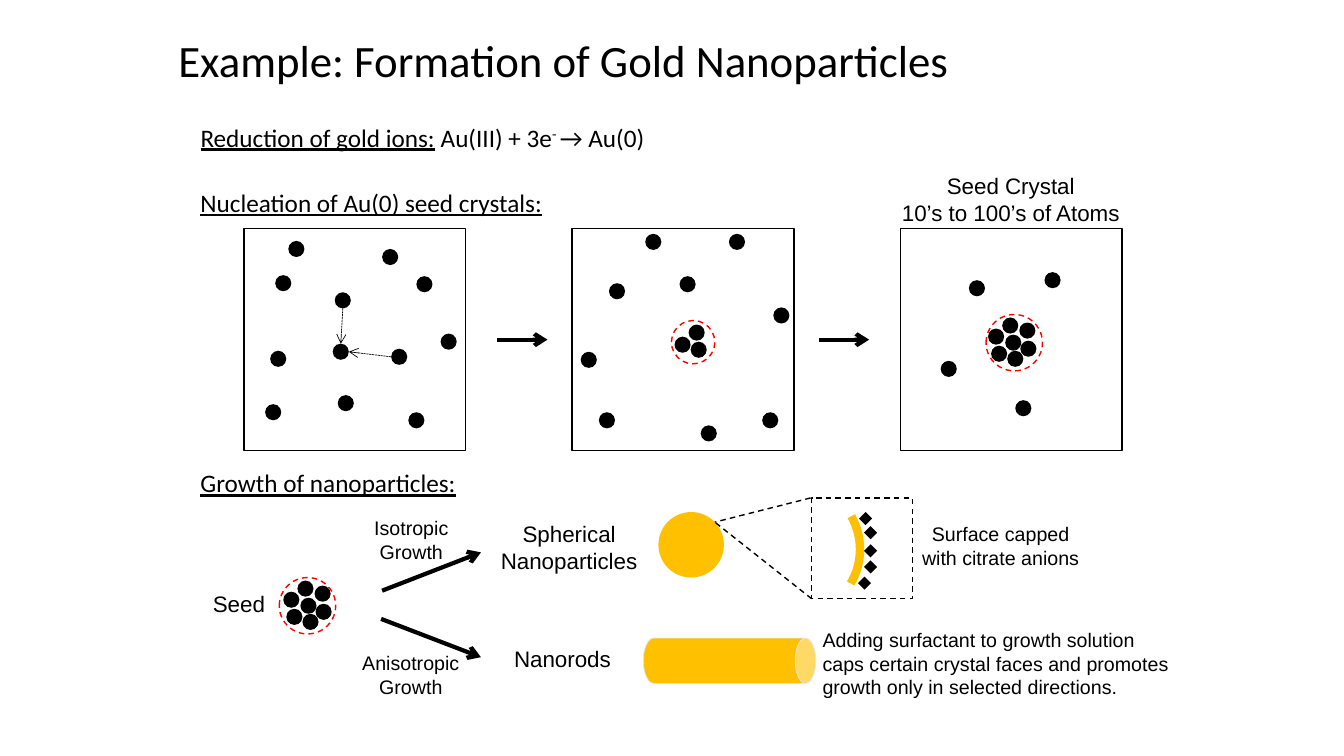
"""Build the slide on the formation of gold nanoparticles."""
from lxml.etree import SubElement
from pptx import Presentation
from pptx.dml.color import RGBColor
from pptx.enum.dml import MSO_LINE as DASH
from pptx.enum.shapes import MSO_CONNECTOR, MSO_SHAPE as SHAPE
from pptx.enum.text import MSO_ANCHOR, MSO_AUTO_SIZE, PP_ALIGN
from pptx.oxml.ns import qn
from pptx.util import Inches, Pt

COLORS = {"black": "000000", "red": "FF0000", "gold": "FFC000", "gray": "E7E6E6"}
ATOM = 0.16
LEFT, CENTER = PP_ALIGN.LEFT, PP_ALIGN.CENTER

prs = Presentation()
prs.slide_width, prs.slide_height = Inches(13.33), Inches(7.5)
slide = prs.slides.add_slide(prs.slide_layouts[6])


def draw(kind, x, y, w, h, fill=None, line=None, width=1, dash=None):
    shape = slide.shapes.add_shape(kind, Inches(x), Inches(y), Inches(w), Inches(h))
    shape.shadow.inherit = False
    if fill:
        shape.fill.solid()
        shape.fill.fore_color.rgb = RGBColor.from_string(COLORS[fill])
    else:
        shape.fill.background()
    if line:
        shape.line.color.rgb = RGBColor.from_string(COLORS[line])
        shape.line.width = Pt(width)
        shape.line.dash_style = dash
    else:
        shape.line.fill.background()
    return shape


def write(x, y, w, h, lines, size, font="Arial", align=LEFT):
    frame = slide.shapes.add_textbox(Inches(x), Inches(y), Inches(w), Inches(h)).text_frame
    frame.word_wrap = False
    frame.auto_size = MSO_AUTO_SIZE.SHAPE_TO_FIT_TEXT
    frame.text = "\n".join(lines)
    for paragraph in frame.paragraphs:
        paragraph.alignment = align
        paragraph.font.size = Pt(size)
        paragraph.font.name = font
        paragraph.font.color.rgb = RGBColor.from_string(COLORS["black"])
    return frame


title = write(1.67, 0, 9, 1.25, ["Example: Formation of Gold Nanoparticles"], 32, "Calibri")
title.word_wrap = True
title.auto_size = MSO_AUTO_SIZE.NONE
title.vertical_anchor = MSO_ANCHOR.MIDDLE
title.paragraphs[0].line_spacing = 0.9

headings = [
    (1.16, 4.69, "Reduction of gold ions:",
     [(" Au(III) + 3e", 0), ("- ", 30000), ("→ Au(0)", 0)]),
    (1.81, 3.63, "Nucleation of Au(0) seed crystals:", []),
    (4.59, 2.76, "Growth of nanoparticles:", []),
]
for y, w, heading, equation in headings:
    paragraph = write(1.89, y, w, 0.4, [heading], 18, "Calibri").paragraphs[0]
    paragraph.runs[0].font.underline = True
    for part, baseline in equation:
        run = paragraph.add_run()
        run.text = part
        if baseline:
            run.font._element.set("baseline", str(baseline))

free_atoms = [
    (2.86, 2.39), (4.13, 2.74), (3.32, 2.9), (3.88, 3.46), (3.35, 3.92), (2.68, 3.48),
    (3.3, 3.41), (2.73, 2.73), (3.79, 2.47), (4.37, 3.31), (2.63, 4.01), (4.05, 4.09),
    (6.4, 2.32), (6.74, 2.74), (6.83, 3.22), (6.85, 3.39), (6.95, 4.22), (5.76, 3.49),
    (6.69, 3.34), (6.04, 2.81), (7.23, 2.32), (7.67, 3.05), (5.94, 4.09), (7.56, 4.09),
    (9.61, 2.78), (10.07, 3.97), (10.36, 2.7), (9.33, 3.58),
]
seed_atoms = [(0.33, 0.08), (0.16, 0.03), (0.19, 0.2), (0.05, 0.31),
              (0.02, 0.14), (0.34, 0.26), (0.21, 0.36)]
seeds = [(9.78, 3.12), (2.79, 5.73)]
clustered = [(x + dx, y + dy) for x, y in seeds for dx, dy in seed_atoms]
for x, y in free_atoms + clustered:
    draw(SHAPE.OVAL, x, y, ATOM, ATOM, fill="black")

for x, y, size in [(6.66, 3.18, 0.43), (9.78, 3.12, 0.56), (2.77, 5.73, 0.56)]:
    draw(SHAPE.OVAL, x, y, size, size, line="red", dash=DASH.DASH)
for stage in range(3):
    draw(SHAPE.RECTANGLE, 2.42 + 3.255 * stage, 2.27, 2.2, 2.2, line="black")

rod = draw(SHAPE.CAN, 7.01, 5.7, 0.45, 1.71, fill="gold", line="gray", width=0.5)
rod.rotation = 90
rod.adjustments[0] = 0.452

surface = draw(SHAPE.ARC, 7.1, 4.76, 1.43, 1.38, line="gold", width=6)
surface.adjustments[0] = 199.429
surface.adjustments[1] = 17.109
draw(SHAPE.OVAL, 6.53, 5.08, 0.65, 0.65, fill="gold")
for x, y in [(8.52, 5.08), (8.57, 5.22), (8.57, 5.4), (8.57, 5.56), (8.51, 5.72)]:
    draw(SHAPE.DIAMOND, x, y, 0.13, 0.13, fill="black")
draw(SHAPE.RECTANGLE, 8.05, 4.94, 1, 1, line="black", dash=DASH.DASH)

links = [
    (3.4, 3.06, 3.38, 3.41, 0.5, DASH.SQUARE_DOT, True),
    (3.88, 3.54, 3.46, 3.49, 0.5, DASH.SQUARE_DOT, True),
    (4.93, 3.37, 5.43, 3.37, 3, None, True),
    (8.12, 3.37, 8.62, 3.37, 3, None, True),
    (3.79, 5.86, 4.77, 5.48, 3, None, True),
    (3.78, 6.14, 4.77, 6.52, 3, None, True),
    (8.04, 4.94, 7.09, 5.18, 1, DASH.DASH, False),
    (8.05, 5.94, 7.09, 5.18, 1, DASH.DASH, False),
]
for x1, y1, x2, y2, width, dash, arrow in links:
    link = slide.shapes.add_connector(
        MSO_CONNECTOR.STRAIGHT, Inches(x1), Inches(y1), Inches(x2), Inches(y2))
    link.line.color.rgb = RGBColor.from_string(COLORS["black"])
    link.line.width = Pt(width)
    link.line.dash_style = dash
    if arrow:
        SubElement(link.line._get_or_add_ln(), qn("a:tailEnd"), type="arrow")
    SubElement(link._element.spPr, qn("a:effectLst"))

labels = [
    (8.83, 1.66, 2.39, 0.64, ["Seed Crystal", "10’s to 100’s of Atoms"], 16, CENTER),
    (2.01, 5.81, 0.72, 0.37, ["Seed"], 16, CENTER),
    (3.61, 5.07, 0.94, 0.57, ["Isotropic", "Growth"], 14, CENTER),
    (3.49, 6.41, 1.17, 0.57, ["Anisotropic", "Growth"], 14, CENTER),
    (4.86, 5.11, 1.57, 0.64, ["Spherical", "Nanoparticles"], 16, CENTER),
    (5, 6.35, 1.17, 0.37, ["Nanorods"], 16, LEFT),
    (9.04, 5.13, 1.77, 0.57, ["Surface capped", "with citrate anions"], 14, CENTER),
    (8.06, 6.18, 3.65, 0.81, ["Adding surfactant to growth solution",
                              "caps certain crystal faces and promotes",
                              "growth only in selected directions."], 14, LEFT),
]
for x, y, w, h, lines, size, align in labels:
    write(x, y, w, h, lines, size, align=align)

prs.save("out.pptx")
